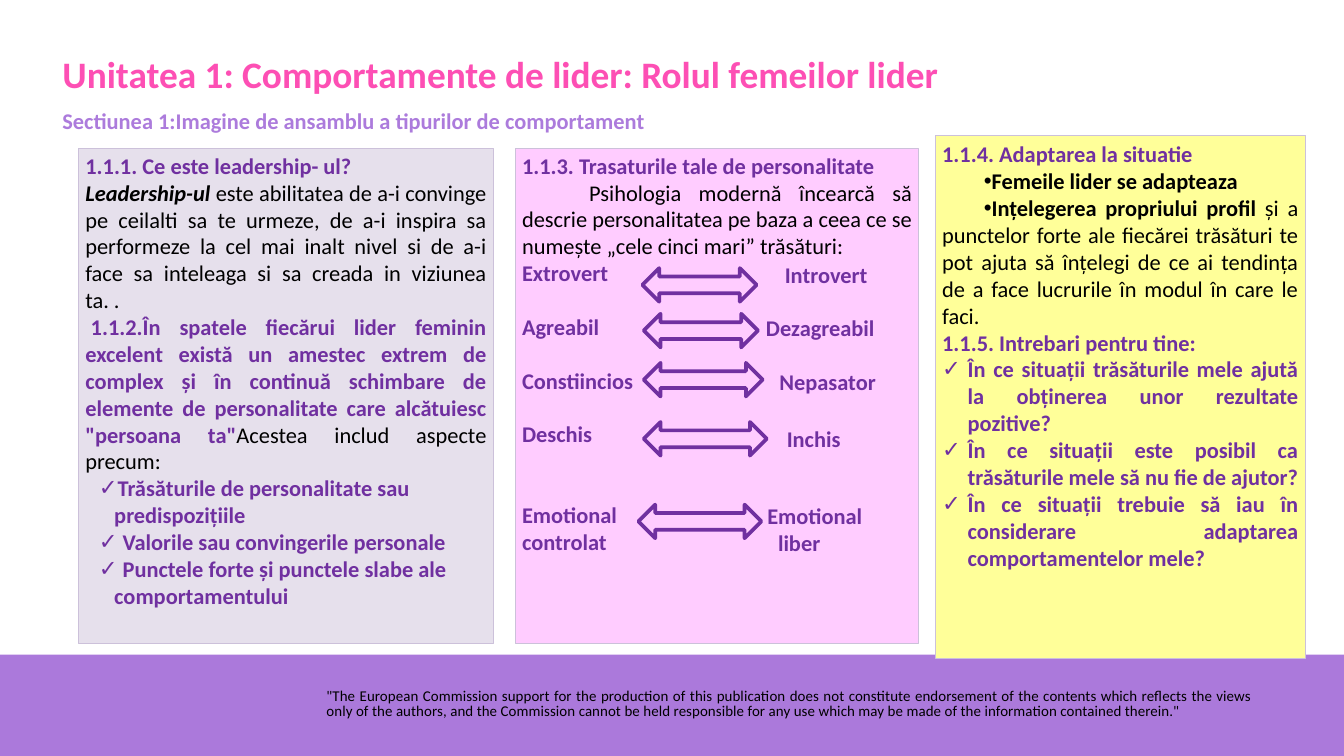
"""Build the slide on leadership behaviours and personality traits."""
from dataclasses import dataclass

from lxml.etree import SubElement
from pptx import Presentation
from pptx.dml.color import RGBColor as Rgb
from pptx.enum.shapes import MSO_SHAPE as Kind
from pptx.enum.text import MSO_ANCHOR as Anchor, MSO_AUTO_SIZE as Fit, PP_ALIGN as Align
from pptx.oxml.ns import qn
from pptx.util import Inches, Pt

HUES = {
    "plum": "7030A0", "black": "000000", "pink": "FD4FB4", "lilac": "AC7BDC",
    "band": "AB79DB", "edge": "CCC1DA", "grey": "E6E0EC", "rose": "FFCCFF",
    "lemon": "FFFF99",
}
LINE = 28.8


@dataclass
class Span:
    text: str
    hue: str = "plum"
    bold: bool = True
    slant: bool = False
    size: float = 24


@dataclass
class Para:
    spans: list[Span]
    full: bool = False
    left: float = 0
    first: float = 0
    mark: str = ""
    gap: float = 0


@dataclass
class Box:
    left: float
    top: float
    width: float
    height: float


@dataclass
class Trait:
    low: list[str]
    high: list[str]
    left: float
    top: float
    arrow: Box
    rows: int = 1


def color(name: str) -> Rgb:
    return Rgb.from_string(HUES[name])


def place(shape, box: Box) -> None:
    shape.left, shape.top = Inches(box.left), Inches(box.top)
    shape.width, shape.height = Inches(box.width), Inches(box.height)


def style(run, span: Span) -> None:
    font = run.font
    font.name, font.size = "Calibri", Pt(span.size)
    font.bold, font.italic = span.bold, span.slant
    font.color.rgb = color(span.hue)


def write(shape, paras: list[Para], top: float = 0.05) -> None:
    frame = shape.text_frame
    frame.word_wrap, frame.auto_size = True, Fit.NONE
    frame.vertical_anchor = Anchor.TOP
    frame.margin_top = Inches(top)
    for num, para in enumerate(paras):
        line = frame.add_paragraph() if num else frame.paragraphs[0]
        props = line._p.get_or_add_pPr()
        props.set("marL", str(Inches(para.left)))
        props.set("indent", str(Inches(para.first)))
        if para.mark:
            SubElement(props, qn("a:buChar"), char=para.mark)
        else:
            SubElement(props, qn("a:buNone"))
        line.alignment = Align.JUSTIFY if para.full else Align.LEFT
        line.space_before = Pt(para.gap)
        for span in para.spans:
            run = line.add_run()
            run.text = span.text
            style(run, span)


def panel(shape, box: Box, hue: str, paras: list[Para], top: float = 0.05) -> None:
    place(shape, box)
    shape.fill.solid()
    shape.fill.fore_color.rgb = color(hue)
    shape.line.color.rgb = color("edge")
    shape.line.width = Pt(0.75)
    write(shape, paras, top)


def add(slide, kind: Kind, box: Box):
    shape = slide.shapes.add_shape(kind, 0, 0, 0, 0)
    place(shape, box)
    shape.shadow.inherit = False
    return shape


def label(slide, box: Box, paras: list[Para]):
    shape = slide.shapes.add_textbox(0, 0, 0, 0)
    place(shape, box)
    write(shape, paras)
    return shape


def contrast(slide, trait: Trait) -> None:
    shape = add(slide, Kind.LEFT_RIGHT_ARROW, trait.arrow)
    shape.fill.background()
    shape.line.color.rgb = color("plum")
    shape.line.width = Pt(4)
    paras = [Para([Span(text)], left=0.16 * num) for num, text in enumerate(trait.high)]
    label(slide, Box(trait.left, trait.top, 1.9, 0.1 + 0.4 * len(paras)), paras)


LEAD = [
    Para([Span("1.1.1. Ce este leadership- ul?")]),
    Para([Span("Leadership-ul", "black", slant=True),
          Span(" este abilitatea de a-i convinge pe ceilalti sa te urmeze, de a-i "
               "inspira sa performeze la cel mai inalt nivel si de a-i face sa "
               "inteleaga si sa creada in viziunea ta. .", "black", False)], True),
    Para([Span("1.1.2.În spatele fiecărui lider feminin excelent există un amestec "
               "extrem de complex și în continuă schimbare de elemente de "
               "personalitate care alcătuiesc \"persoana ta\""),
          Span("Acestea includ aspecte precum:", "black", False)], True, first=0.08),
] + [Para([Span(text)], left=0.43, first=-0.23, mark="✓") for text in (
    "Trăsăturile de personalitate sau predispozițiile",
    " Valorile sau convingerile personale",
    " Punctele forte și punctele slabe ale comportamentului")]

PAIRS = [
    Trait(["Extrovert"], ["Introvert"], 11.58, 3.83, Box(9.56, 3.99, 1.7, 0.5), 0),
    Trait(["Agreabil"], ["Dezagreabil"], 11.3, 4.63, Box(9.58, 4.67, 1.7, 0.5)),
    Trait(["Constiincios"], ["Nepasator"], 11.5, 5.43, Box(9.58, 5.4, 1.77, 0.5)),
    Trait(["Deschis"], ["Inchis"], 11.61, 6.28, Box(9.58, 6.28, 1.83, 0.5)),
    Trait(["Emotional", "controlat"], ["Emotional", "liber"], 11.32, 7.43,
          Box(9.5, 7.51, 1.83, 0.5), 2),
]
TRAITS = [
    Para([Span("1.1.3. Trasaturile tale de personalitate")]),
    Para([Span("Psihologia modernă încearcă să descrie personalitatea pe baza a ceea "
               "ce se numește „cele cinci mari” trăsături:", "black", False)],
         True, first=1),
] + [Para([Span(text)], gap=0 if num else pair.rows * LINE)
     for pair in PAIRS for num, text in enumerate(pair.low)]

ADAPT = [
    Para([Span("1.1.4. Adaptarea la situatie")], True),
    Para([Span("Femeile lider se adapteaza", "black")], True, first=0.62, mark="•"),
    Para([Span("Ințelegerea propriului profil ", "black"),
          Span("și a punctelor forte ale fiecărei trăsături te pot ajuta să înțelegi "
               "de ce ai tendința de a face lucrurile în modul în care le faci.",
               "black", False)], True, first=0.62, mark="•"),
    Para([Span("1.1.5. Intrebari pentru tine:")], True),
] + [Para([Span(text)], True, 0.38, -0.38, "✓") for text in (
    "În ce situații trăsăturile mele ajută la obținerea unor rezultate pozitive?",
    "În ce situații este posibil ca trăsăturile mele să nu fie de ajutor?",
    "În ce situații trebuie să iau în considerare adaptarea comportamentelor mele?")]

NOTE = ("\"The European Commission support for the production of this publication does "
        "not constitute endorsement of the contents which reflects the views only of "
        "the authors, and the Commission cannot be held responsible for any use which "
        "may be made of the information contained therein.\"")


def main() -> None:
    deck = Presentation()
    deck.slide_width, deck.slide_height = Inches(20), Inches(11.25)
    slide = deck.slides.add_slide(deck.slide_layouts[3])
    title, left, right = slide.placeholders

    band = add(slide, Kind.RECTANGLE, Box(0, 9.74, 20, 1.51))
    band.fill.solid()
    band.fill.fore_color.rgb = color("band")
    band.line.fill.background()
    slide.shapes.element.insert(2, band.element)
    note = label(slide, Box(4.75, 10.21, 14, 0.55),
                 [Para([Span(NOTE, "black", False, size=16)], True, 0.01)])
    line = note.text_frame.paragraphs[0]
    line.line_spacing = Pt(16.1)
    line.runs[0].font._element.set("spc", "10")

    place(title, Box(0.83, 0.71, 14.92, 0.77))
    write(title, [Para([Span("Unitatea 1: Comportamente de lider: Rolul femeilor lider",
                             "pink", size=40)])])
    label(slide, Box(0.83, 1.54, 8.95, 0.5), [Para([Span(
        "Sectiunea 1:Imagine de ansamblu a tipurilor de comportament", "lilac")])])

    panel(left, Box(1.17, 2.21, 6.17, 7.37), "grey", LEAD)
    mid = Box(7.67, 2.21, 6, 7.37)
    panel(add(slide, Kind.RECTANGLE, mid), mid, "rose", TRAITS)
    panel(right, Box(13.92, 2.01, 5.5, 7.78), "lemon", ADAPT, 0.08)
    for pair in PAIRS:
        contrast(slide, pair)
    deck.save("out.pptx")


if __name__ == "__main__":
    main()
